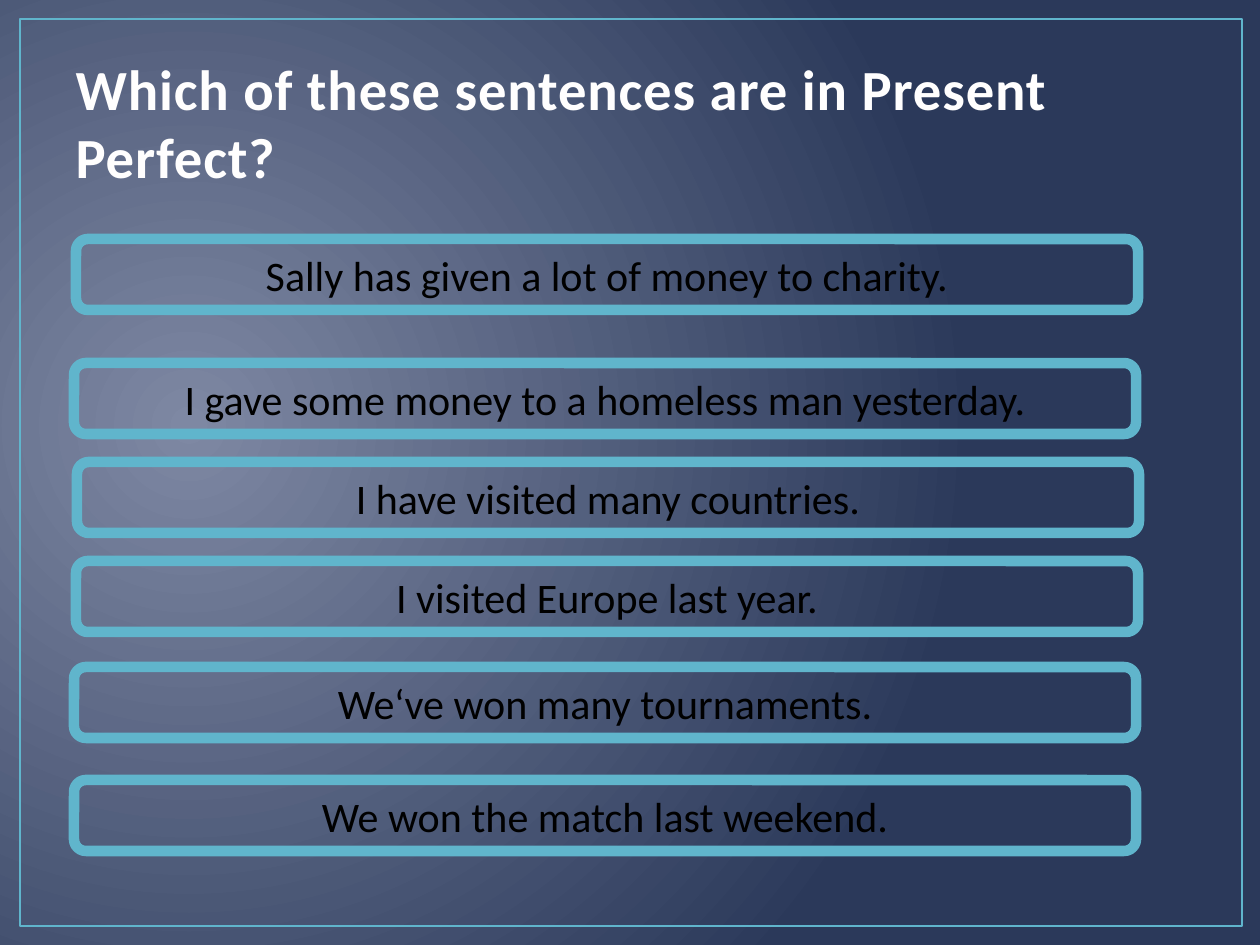
from lxml import etree
from pptx import Presentation
from pptx.dml.color import RGBColor
from pptx.enum.shapes import MSO_SHAPE
from pptx.enum.text import MSO_ANCHOR, PP_ALIGN
from pptx.oxml.ns import qn
from pptx.util import Pt

RECTANGLE = MSO_SHAPE.RECTANGLE
ROUNDED = MSO_SHAPE.ROUNDED_RECTANGLE
BOTTOM = MSO_ANCHOR.BOTTOM
MIDDLE = MSO_ANCHOR.MIDDLE
LEFT = PP_ALIGN.LEFT
CENTER = PP_ALIGN.CENTER

EMU_PER_PX = 914400 / 126
TITLE_ONLY = 5
FONT = "Calibri"
COLORS = {
    "glow": "7E88A3",
    "night": "2B395A",
    "border": "60B5CC",
    "title": "FFFEFE",
    "sentence": "000000",
}
GLOW_FOCUS = {"l": "15000", "t": "50000", "r": "85000", "b": "60000"}
QUESTION = "Which of these sentences are in Present Perfect?"
SENTENCES = [
    (76, 239, "Sally has given a lot of money to charity."),
    (74, 363, "I gave some money to a homeless man yesterday."),
    (77, 462, "I have visited many countries."),
    (76, 561, "I visited Europe last year."),
    (74, 667, "We‘ve won many tournaments."),
    (74, 780, "We won the match last weekend."),
]


def px(length):
    return round(length * EMU_PER_PX)


def color(name):
    return RGBColor.from_string(COLORS[name])


def paint_background(slide):
    fill = slide.background.fill
    fill.gradient()
    for stop, position, name in zip(fill.gradient_stops, (0, 1), ("glow", "night")):
        stop.position = position
        stop.color.rgb = color(name)
    linear = next(slide.element.iter(qn("a:lin")))
    radial = etree.Element(qn("a:path"), {"path": "circle"})
    etree.SubElement(radial, qn("a:fillToRect"), GLOW_FOCUS)
    linear.getparent().replace(linear, radial)


def add_outline(slide, preset, left, top, width, height, weight):
    outline = slide.shapes.add_shape(preset, px(left), px(top), px(width), px(height))
    outline.shadow.inherit = False
    outline.fill.background()
    outline.line.color.rgb = color("border")
    outline.line.width = Pt(weight)
    return outline


def write(frame, wording, size, color_name, alignment, anchor, bold=False):
    frame.word_wrap = True
    frame.vertical_anchor = anchor
    paragraph = frame.paragraphs[0]
    paragraph.alignment = alignment
    run = paragraph.add_run()
    run.text = wording
    run.font.name = FONT
    run.font.size = Pt(size)
    run.font.bold = bold
    run.font.color.rgb = color(color_name)
    return run


def set_title(slide, wording):
    title = slide.shapes.title
    title.left, title.top, title.width, title.height = map(px, (63, 38, 1134, 158))
    run = write(title.text_frame, wording, 32.4, "title", LEFT, BOTTOM, bold=True)
    run.font._element.set("spc", "50")


def add_sentence(slide, left, top, wording):
    box = add_outline(slide, ROUNDED, left, top, 1062, 71, 6)
    write(box.text_frame, wording, 24, "sentence", CENTER, MIDDLE)


def main():
    deck = Presentation()
    deck.slide_width, deck.slide_height = px(1260), px(945)
    slide = deck.slides.add_slide(deck.slide_layouts[TITLE_ONLY])
    paint_background(slide)
    add_outline(slide, RECTANGLE, 20, 19, 1222, 907, 1.5)
    set_title(slide, QUESTION)
    for left, top, wording in SENTENCES:
        add_sentence(slide, left, top, wording)
    deck.save("out.pptx")


if __name__ == "__main__":
    main()
